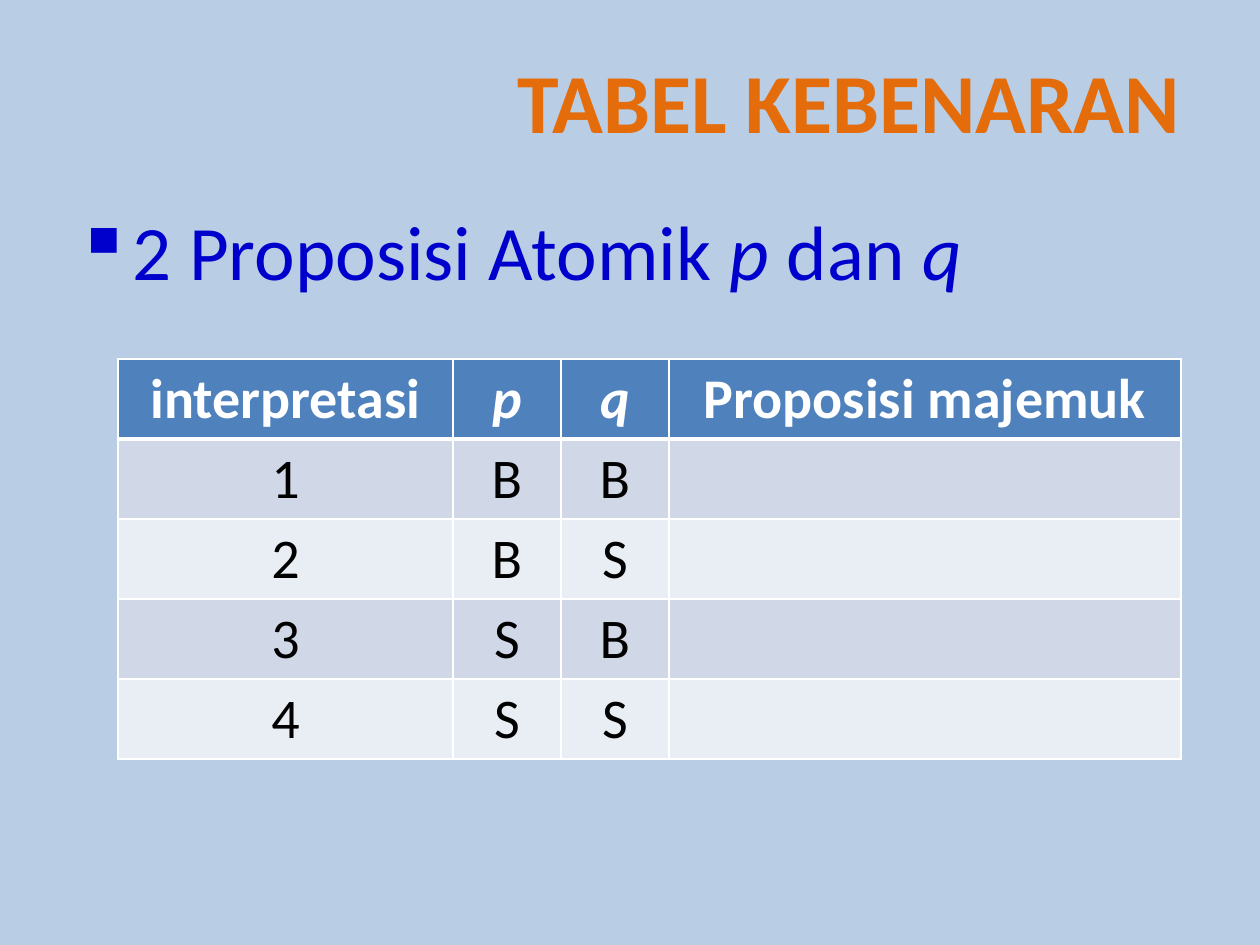
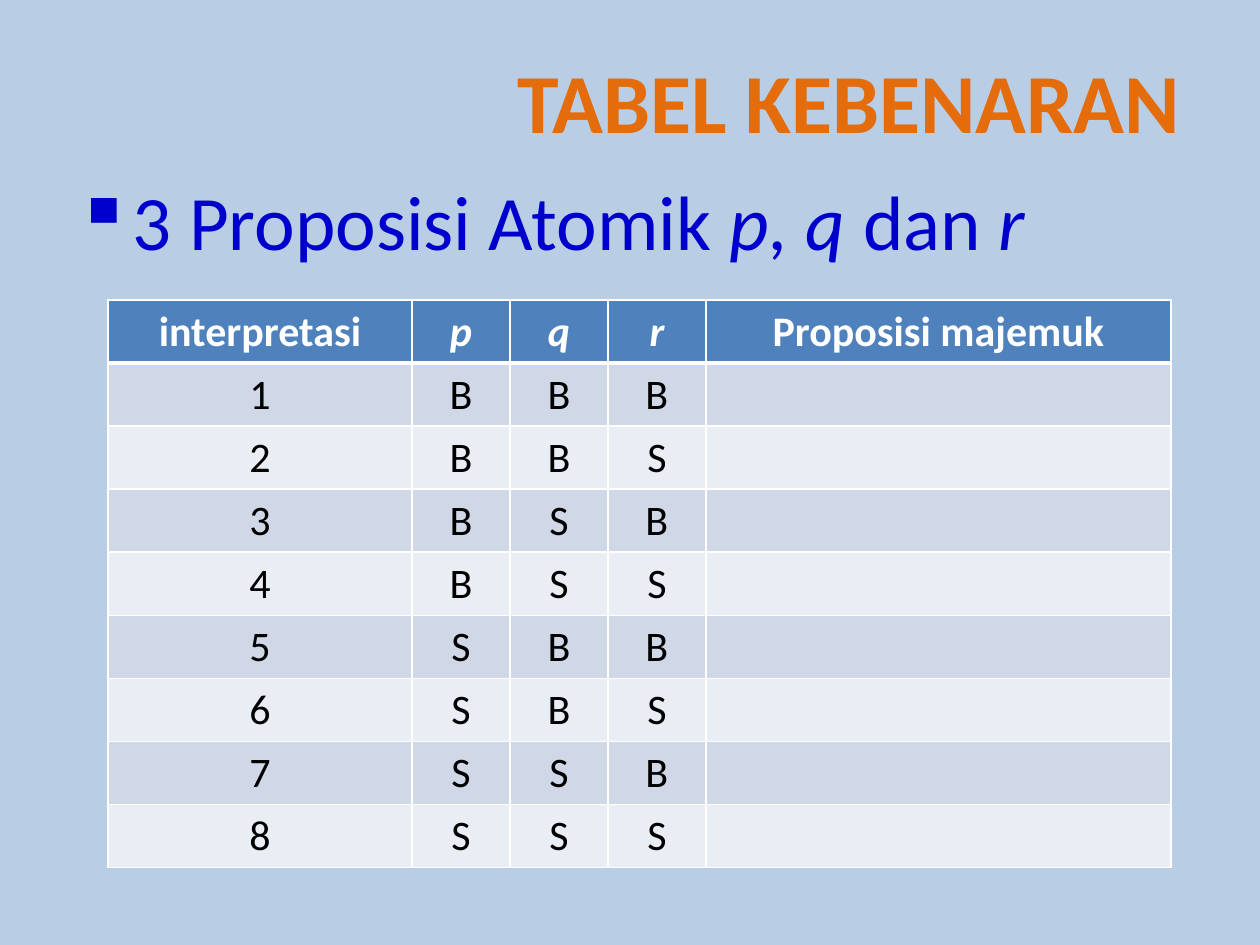
from dataclasses import dataclass
from itertools import product

from lxml.etree import SubElement
from pptx import Presentation
from pptx.dml.color import RGBColor
from pptx.enum.text import MSO_ANCHOR, PP_ALIGN
from pptx.oxml import parse_xml
from pptx.oxml.ns import nsdecls, qn
from pptx.util import Emu, Pt


@dataclass(frozen=True)
class Theme:
    font: str = "Calibri"
    background: str = "B9CDE5"
    title: str = "E46C0A"
    statement: str = "0000CC"
    header_text: str = "FFFFFF"
    body_text: str = "000000"
    header_fill: str = "4F81BD"
    odd_fill: str = "D0D8E8"
    even_fill: str = "E9EDF4"
    border: str = "FFFFFF"
    title_size: int = 48
    statement_size: int = 44


THEME = Theme()
PIXELS_PER_INCH = 126


def px(length):
    return Emu(round(length * 914400 / PIXELS_PER_INCH))


def add_text(paragraph, text, *, size, color, bold=False, italic=False):
    run = paragraph.add_run()
    run.text = text
    run.font.name = THEME.font
    run.font.size = Pt(size)
    run.font.bold = bold
    run.font.italic = italic
    run.font.color.rgb = RGBColor.from_string(color)


def add_text_box(slide, left, top, width, height, wrap):
    shape = slide.shapes.add_textbox(px(left), px(top), px(width), px(height))
    shape.text_frame.word_wrap = wrap
    return shape.text_frame.paragraphs[0]


def add_title(slide, text):
    paragraph = add_text_box(slide, 501, 43, 696, 115, wrap=False)
    paragraph.alignment = PP_ALIGN.CENTER
    add_text(paragraph, text, size=THEME.title_size, color=THEME.title, bold=True)


def set_bullet(paragraph, indent):
    properties = paragraph._p.get_or_add_pPr()
    properties.set("marL", str(px(indent)))
    properties.set("indent", str(-px(indent)))
    space_before = SubElement(properties, qn("a:spcBef"))
    SubElement(space_before, qn("a:spcPct")).set("val", "20000")
    SubElement(properties, qn("a:buChar")).set("char", "▪")


def add_statement(slide, top, parts):
    paragraph = add_text_box(slide, 63, top, 1134, 655, wrap=True)
    set_bullet(paragraph, 47)
    for text, italic in parts:
        add_text(paragraph, text, size=THEME.statement_size,
                 color=THEME.statement, italic=italic)


def set_borders(cell, top=1, bottom=1):
    properties = cell._tc.get_or_add_tcPr()
    widths = {"lnL": 1, "lnR": 1, "lnT": top, "lnB": bottom}
    for position, (side, width) in enumerate(widths.items()):
        line = parse_xml(
            f'<a:{side} {nsdecls("a")} w="{Pt(width)}"><a:solidFill>'
            f'<a:srgbClr val="{THEME.border}"/></a:solidFill></a:{side}>')
        properties.insert(position, line)


def format_cell(cell, row, text, size, italic):
    header = row == 0
    row_fill = THEME.odd_fill if row % 2 else THEME.even_fill
    cell.fill.solid()
    cell.fill.fore_color.rgb = RGBColor.from_string(
        THEME.header_fill if header else row_fill)
    cell.vertical_anchor = MSO_ANCHOR.TOP
    set_borders(cell, top=3 if row == 1 else 1, bottom=3 if header else 1)
    paragraph = cell.text_frame.paragraphs[0]
    paragraph.alignment = PP_ALIGN.CENTER
    if text:
        add_text(paragraph, text, size=size, bold=header, italic=italic,
                 color=THEME.header_text if header else THEME.body_text)


def add_truth_table(slide, variables, left, top, widths, row_height, size):
    first, variable, last = widths
    column_widths = [first, *[variable] * len(variables), last]
    rows = [["interpretasi", *variables, "Proposisi majemuk"]]
    for number, values in enumerate(product("BS", repeat=len(variables)), 1):
        rows.append([str(number), *values, ""])
    table = slide.shapes.add_table(
        len(rows), len(column_widths), px(left), px(top),
        px(sum(column_widths)), px(row_height * len(rows))).table
    for column, width in zip(table.columns, column_widths):
        column.width = px(width)
    for row_index, texts in enumerate(rows):
        table.rows[row_index].height = px(row_height)
        for column_index, text in enumerate(texts):
            format_cell(table.cell(row_index, column_index), row_index, text,
                        size, italic=text in variables and text != "")


def add_slide(presentation):
    slide = presentation.slides.add_slide(presentation.slide_layouts[6])
    slide.background.fill.solid()
    slide.background.fill.fore_color.rgb = RGBColor.from_string(THEME.background)
    return slide


def main():
    presentation = Presentation()
    presentation.slide_width = px(1260)
    presentation.slide_height = px(945)

    two_variables = add_slide(presentation)
    add_statement(two_variables, 197, [
        ("2 Proposisi Atomik ", False), ("p ", True), ("dan ", False), ("q", True)])
    add_title(two_variables, "TABEL KEBENARAN")
    add_truth_table(two_variables, ["p", "q"], left=118, top=359,
                    widths=(335, 108, 512), row_height=80, size=32)

    three_variables = add_slide(presentation)
    add_statement(three_variables, 167, [
        ("3 Proposisi Atomik ", False), ("p, q ", True), ("dan ", False), ("r", True)])
    add_title(three_variables, "TABEL KEBENARAN")
    add_truth_table(three_variables, ["p", "q", "r"], left=108, top=300,
                    widths=(304, 98, 465), row_height=63, size=24)

    presentation.save("out.pptx")


if __name__ == "__main__":
    main()
